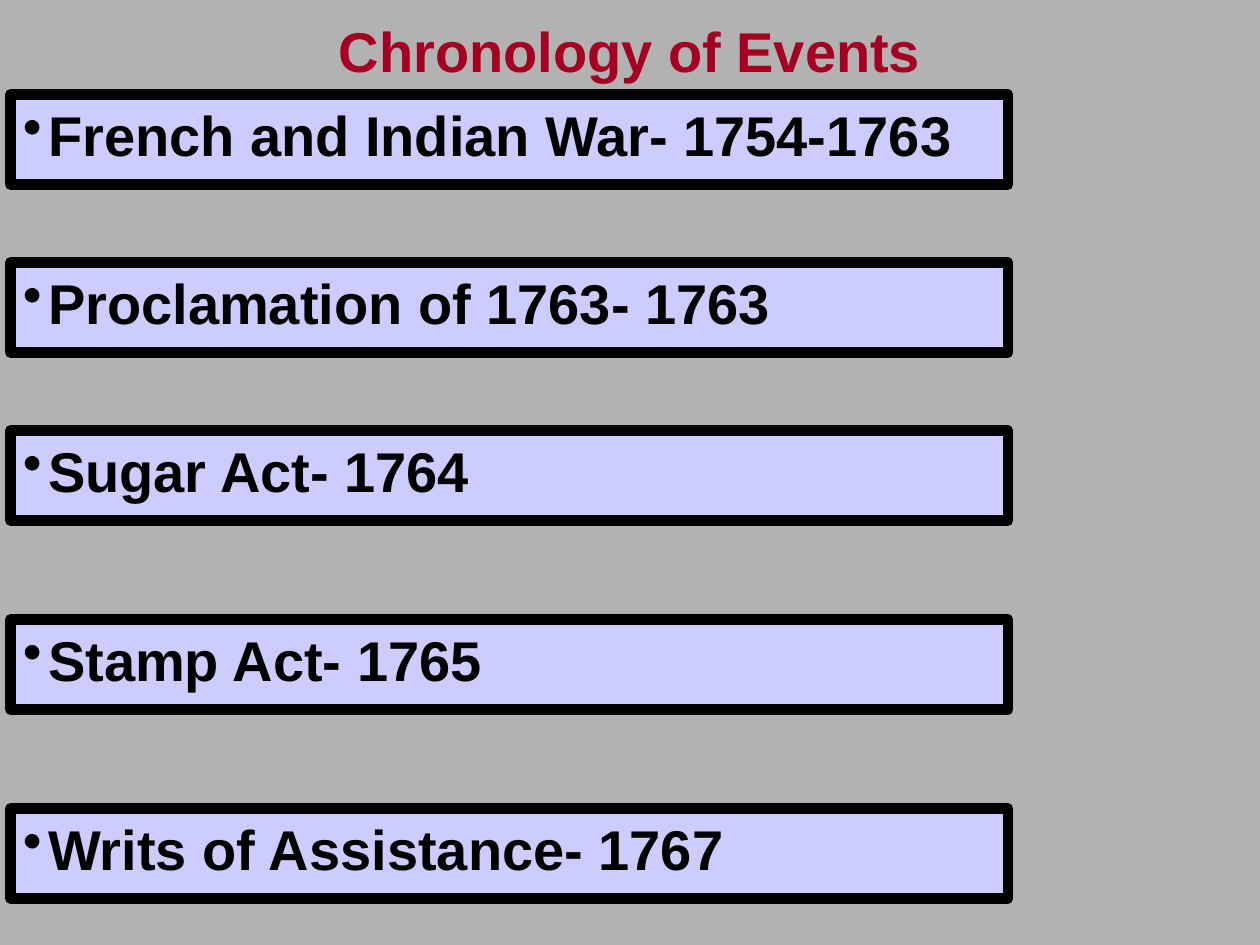
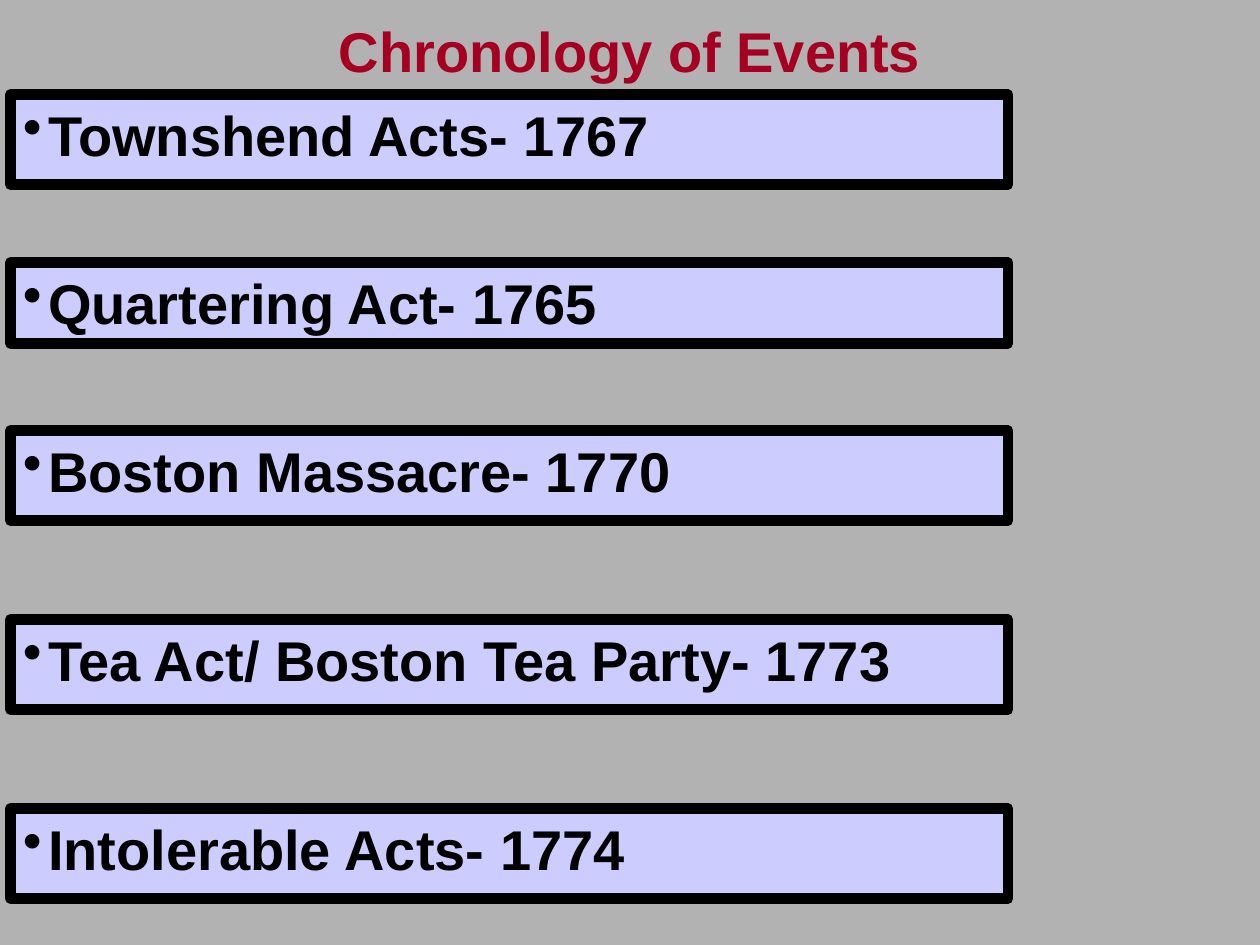
from pptx import Presentation
from pptx.dml.color import RGBColor as RGB
from pptx.enum.shapes import MSO_SHAPE as Preset
from pptx.enum.text import MSO_ANCHOR as Anchor, MSO_AUTO_SIZE as AutoSize, PP_ALIGN as Align
from pptx.oxml.xmlchemy import OxmlElement as Element
from pptx.util import Inches, Pt

COLOURS = {"page": "B2B2B2", "title": "A50021", "band": "CCCCFF", "ink": "000000"}
FONT = "Arial"
TITLE = "Chronology of Events"
BAND_ROWS = [9, 25, 41, 59, 77]
BAND_HEIGHT = 8.6
SHORT_BAND_HEIGHT = 7.7
SHORT_EVENT = "Quartering Act- 1765"
EVENTS = [
    [
        "French and Indian War- 1754-1763",
        "Proclamation of 1763- 1763",
        "Sugar Act- 1764",
        "Stamp Act- 1765",
        "Writs of Assistance- 1767",
    ],
    [
        "Townshend Acts- 1767",
        SHORT_EVENT,
        "Boston Massacre- 1770",
        "Tea Act/ Boston Tea Party- 1773",
        "Intolerable Acts- 1774",
    ],
]

deck = Presentation()
deck.slide_width, deck.slide_height = Inches(10), Inches(7.5)
COLUMN = deck.slide_width / 120
ROW = deck.slide_height / 90


def place(left, top, width, height):
    return int(left * COLUMN), int(top * ROW), int(width * COLUMN), int(height * ROW)


def write(box, text, colour, align, bullet=False):
    frame = box.text_frame
    frame.text = text
    frame.word_wrap = True
    frame.auto_size = AutoSize.SHAPE_TO_FIT_TEXT
    frame.vertical_anchor = Anchor.TOP
    para = frame.paragraphs[0]
    para.alignment = align
    span = para.runs[0]
    span.font.name, span.font.size, span.font.bold = FONT, Pt(32), True
    span.font.color.rgb = RGB.from_string(COLOURS[colour])
    settings = para._p.get_or_add_pPr()
    spacing = Element("a:spcBef")
    percent = Element("a:spcPct")
    percent.set("val", "50000")
    spacing.append(percent)
    settings.append(spacing)
    if bullet:
        settings.set("marL", str(Inches(0.2)))
        settings.set("indent", str(-Inches(0.2)))
        mark = Element("a:buChar")
        mark.set("char", "•")
        settings.append(mark)


for events in EVENTS:
    page = deck.slides.add_slide(deck.slide_layouts[6])
    page.background.fill.solid()
    page.background.fill.fore_color.rgb = RGB.from_string(COLOURS["page"])

    title = page.shapes.add_textbox(*place(3, 1, 114, 7.6))
    write(title, TITLE, "title", Align.CENTER)

    for row, event in zip(BAND_ROWS, events):
        height = SHORT_BAND_HEIGHT if event == SHORT_EVENT else BAND_HEIGHT
        band = page.shapes.add_shape(Preset.RECTANGLE, *place(1, row, 95, height))
        band.shadow.inherit = False
        band.fill.solid()
        band.fill.fore_color.rgb = RGB.from_string(COLOURS["band"])
        band.line.color.rgb = RGB.from_string(COLOURS["ink"])
        band.line.width = Pt(6)
        write(band, event, "ink", Align.LEFT, bullet=True)

deck.save("out.pptx")
